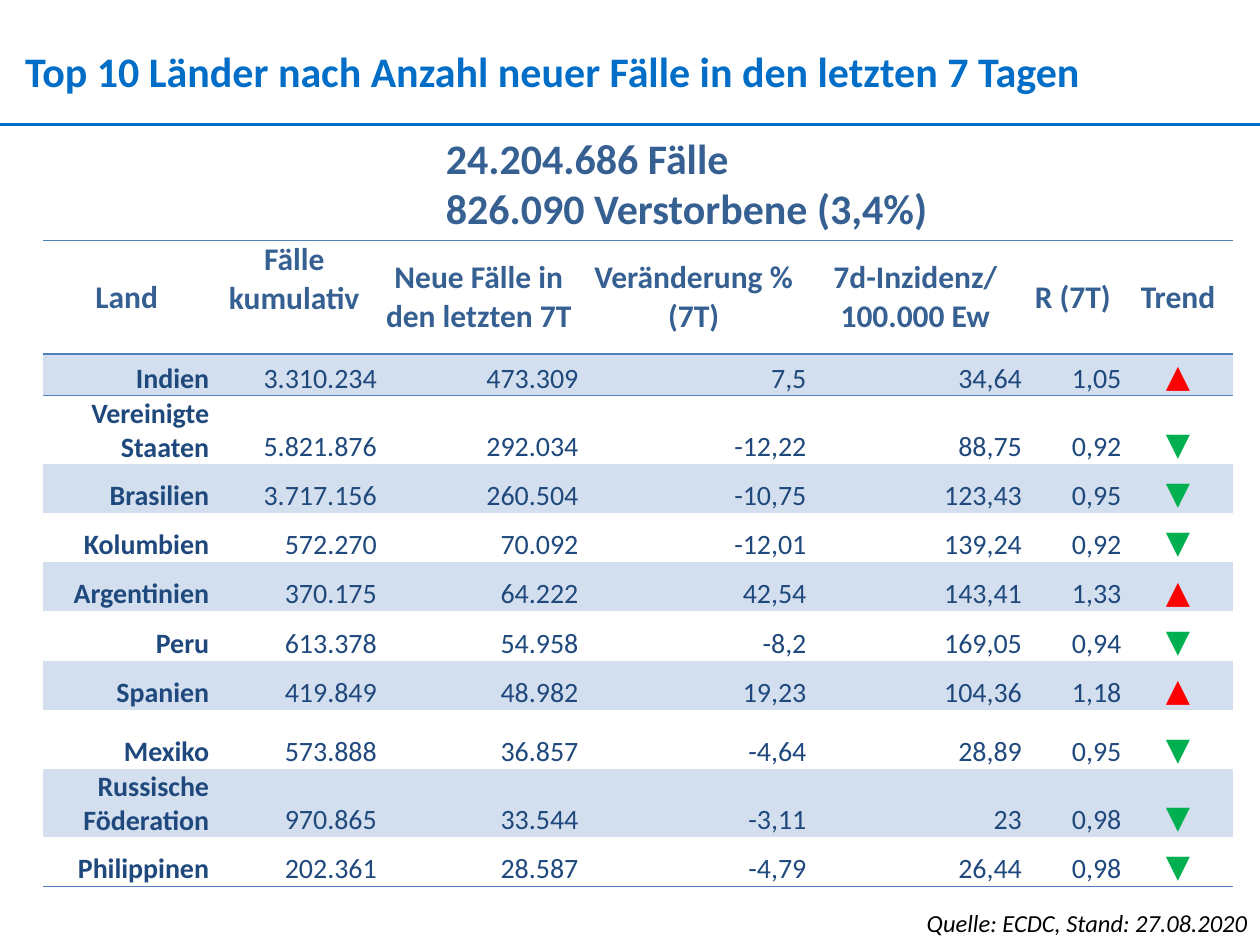
import pptx
import pptx.dml.color
import pptx.enum.shapes
import pptx.enum.text
import pptx.oxml
import pptx.oxml.ns
import pptx.util

Inches, Pt = pptx.util.Inches, pptx.util.Pt
RGB = pptx.dml.color.RGBColor.from_string
ALIGN = pptx.enum.text.PP_ALIGN
ANCHOR = pptx.enum.text.MSO_ANCHOR
qn = pptx.oxml.ns.qn

FONT = "Calibri"
NO_STYLE = "{2D5ABB26-0587-4C30-8999-92F81FD0307C}"
COLORS = {
    "title": "006EC7", "heading": "366092", "body": "1F497D", "source": "000000",
    "band": "D3DFEE", "border": "4F81BD", "▲": "FF0000", "▼": "00B050",
}
COL_WIDTHS = [1.33, 1.33, 1.6, 1.81, 1.71, 0.79, 0.88]
ROW_HEIGHTS = [0.9, 0.33, 0.53, 0.39, 0.39, 0.39, 0.39, 0.39, 0.47, 0.53, 0.39]
HEADER = ["Land", "Fälle kumulativ", "Neue Fälle in den letzten 7T", "Veränderung % (7T)",
          "7d-Inzidenz/ 100.000 Ew", "R (7T)", "Trend"]
COUNTRIES = [
    ["Indien", "3.310.234", "473.309", "7,5", "34,64", "1,05", "▲"],
    ["Vereinigte Staaten", "5.821.876", "292.034", "-12,22", "88,75", "0,92", "▼"],
    ["Brasilien", "3.717.156", "260.504", "-10,75", "123,43", "0,95", "▼"],
    ["Kolumbien", "572.270", "70.092", "-12,01", "139,24", "0,92", "▼"],
    ["Argentinien", "370.175", "64.222", "42,54", "143,41", "1,33", "▲"],
    ["Peru", "613.378", "54.958", "-8,2", "169,05", "0,94", "▼"],
    ["Spanien", "419.849", "48.982", "19,23", "104,36", "1,18", "▲"],
    ["Mexiko", "573.888", "36.857", "-4,64", "28,89", "0,95", "▼"],
    ["Russische Föderation", "970.865", "33.544", "-3,11", "23", "0,98", "▼"],
    ["Philippinen", "202.361", "28.587", "-4,79", "26,44", "0,98", "▼"],
]


def write(tf, lines, color, size, align=ALIGN.LEFT, **font):
    for i, line in enumerate(lines):
        p = tf.paragraphs[0] if i == 0 else tf.add_paragraph()
        p.alignment = align
        r = p.add_run()
        r.text = line
        for name, value in {"name": FONT, "size": Pt(size), **font}.items():
            setattr(r.font, name, value)
        r.font.color.rgb = RGB(COLORS[color])


def set_margins(obj, left, top, right, bottom):
    for side, value in zip(("left", "top", "right", "bottom"), (left, top, right, bottom)):
        setattr(obj, f"margin_{side}", Inches(value))


def add_text(s, box, lines, color, size, wrap=True, **style):
    tf = s.shapes.add_textbox(*map(Inches, box)).text_frame
    tf.word_wrap = wrap
    write(tf, lines, color, size, **style)
    return tf


def add_title(s, left, top, width, height):
    tf = add_text(s, (left, top, width, height),
                  ["Top 10 Länder nach Anzahl neuer Fälle in den letzten 7 Tagen"],
                  "title", 24, bold=True)
    set_margins(tf, 0, 0, 0, 0)


def add_rule(s, left, top, width):
    line = s.shapes.add_connector(pptx.enum.shapes.MSO_CONNECTOR.STRAIGHT, Inches(left),
                                  Inches(top), Inches(left + width), Inches(top))
    line.line.color.rgb = RGB(COLORS["title"])
    line.line.width = Pt(1.5)
    line._element.spPr.append(pptx.oxml.parse_xml(
        f"<a:effectLst {pptx.oxml.ns.nsdecls('a')}/>"))


def add_border(cell, tag):
    ln = pptx.oxml.parse_xml(
        f'<a:{tag} {pptx.oxml.ns.nsdecls("a")} w="{Pt(1)}"><a:solidFill>'
        f'<a:srgbClr val="{COLORS["border"]}"/></a:solidFill></a:{tag}>')
    tcPr = cell._tc.get_or_add_tcPr()
    tcPr.insert(len(tcPr.findall(qn("a:lnT"))), ln)


def fill_header_cell(cell, text):
    cell.vertical_anchor = ANCHOR.MIDDLE
    # The two-line heading of the totals sits one line higher than the others
    set_margins(cell, 0.06, 0, 0.06, 0.3 if text == "Fälle kumulativ" else 0)
    write(cell.text_frame, [text], "heading", 18, ALIGN.CENTER, bold=True)


def fill_country_cell(cell, text, is_name):
    cell.vertical_anchor = ANCHOR.BOTTOM
    set_margins(cell, 0.01, 0.01, 0.01, 0)
    if text in ("▲", "▼"):
        write(cell.text_frame, [text], text, 18, ALIGN.CENTER, bold=False)
    else:
        write(cell.text_frame, [text], "body", 16, ALIGN.RIGHT, bold=is_name)


def add_country_table(s, left, top):
    rows = [HEADER] + COUNTRIES
    size = (sum(COL_WIDTHS), sum(ROW_HEIGHTS))
    table = s.shapes.add_table(len(rows), len(HEADER),
                               *map(Inches, (left, top, *size))).table
    table.first_row = table.horz_banding = False
    table._tbl.tblPr.find(qn("a:tableStyleId")).text = NO_STYLE
    for col, width in zip(table.columns, COL_WIDTHS):
        col.width = Inches(width)
    for i, (row, height, texts) in enumerate(zip(table.rows, ROW_HEIGHTS, rows)):
        row.height = Inches(height)
        for j, (cell, text) in enumerate(zip(row.cells, texts)):
            if i == 0:
                fill_header_cell(cell, text)
            else:
                fill_country_cell(cell, text, j == 0)
            if i % 2:
                cell.fill.solid()
                cell.fill.fore_color.rgb = RGB(COLORS["band"])
            else:
                cell.fill.background()
            if i in (0, 1):
                add_border(cell, "lnT")
            if i in (0, len(rows) - 1):
                add_border(cell, "lnB")


def main():
    prs = pptx.Presentation()
    prs.slide_width, prs.slide_height = Inches(10), Inches(7.5)
    s = prs.slides.add_slide(prs.slide_layouts[6])
    add_title(s, 0.2, 0.36, 9.63, 0.4)
    add_rule(s, 0, 0.99, 10)
    add_text(s, (3.44, 1, 4.14, 0.91), ["24.204.686 Fälle", "826.090 Verstorbene (3,4%)"],
             "heading", 24, wrap=False, bold=True)
    add_text(s, (6.46, 7.16, 3.54, 0.34), ["Quelle: ECDC, Stand: 27.08.2020"],
             "source", 14, align=ALIGN.RIGHT, italic=True)
    add_country_table(s, 0.34, 1.91)
    prs.save("out.pptx")


if __name__ == "__main__":
    main()
